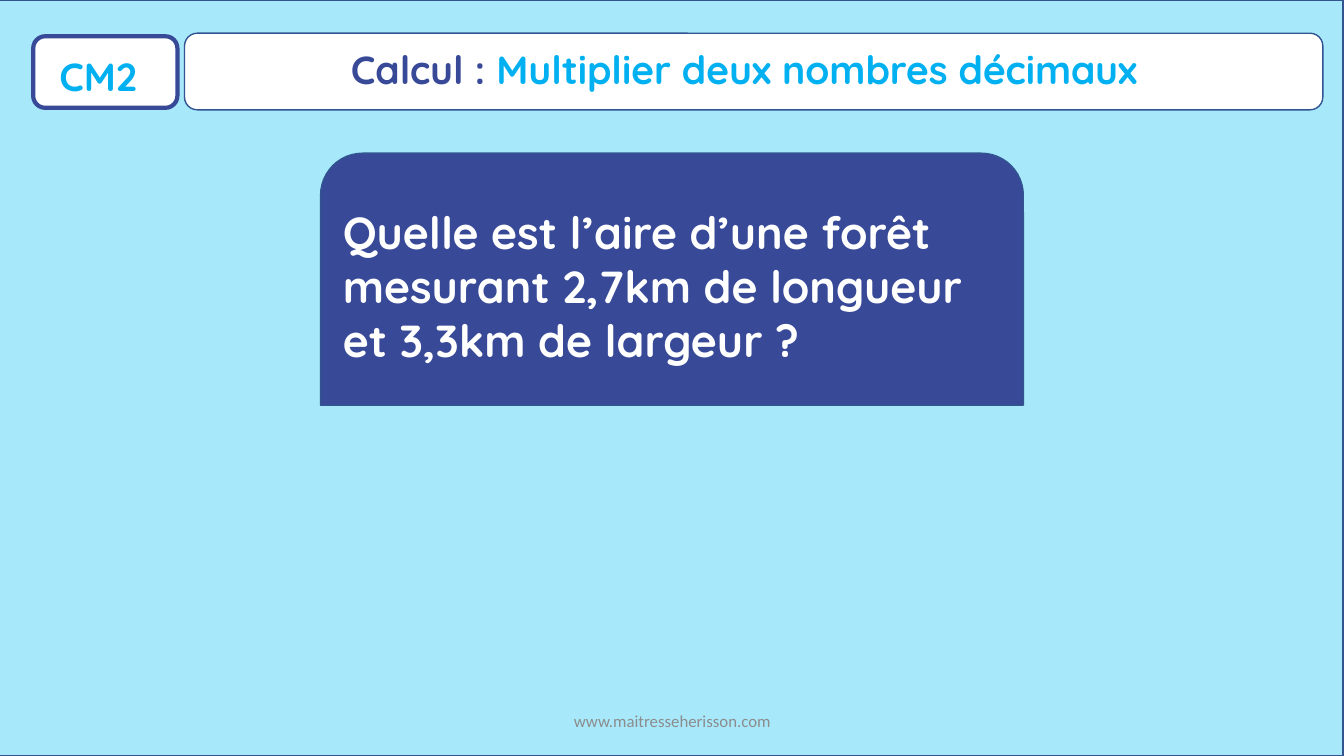
from pptx import Presentation
from pptx.dml.color import RGBColor
from pptx.enum.shapes import MSO_SHAPE
from pptx.enum.text import MSO_ANCHOR, PP_ALIGN
from pptx.util import Inches, Pt

RECTANGLE = MSO_SHAPE.RECTANGLE
ROUNDED = MSO_SHAPE.ROUNDED_RECTANGLE
ROUNDED_TOP = MSO_SHAPE.ROUND_2_SAME_RECTANGLE
LEFT, CENTER = PP_ALIGN.LEFT, PP_ALIGN.CENTER
TOP, MIDDLE = MSO_ANCHOR.TOP, MSO_ANCHOR.MIDDLE

WIDTH, HEIGHT = 13.33, 7.5
SKY, NAVY, CYAN = "A7E8FB", "374997", "00B0F0"
WHITE, GREY, OUTLINE = "FFFFFF", "8C8C8C", "325491"


def color(value):
    return RGBColor.from_string(value)


def add_panel(slide, kind, box, fill, line=OUTLINE, line_width=1):
    shape = slide.shapes.add_shape(kind, *map(Inches, box))
    shape.shadow.inherit = False
    shape.fill.solid()
    shape.fill.fore_color.rgb = color(fill)
    shape.line.color.rgb = color(line)
    shape.line.width = Pt(line_width)
    return shape


def write_text(shape, *runs, size, font="Quicksand", bold=True, align=LEFT, anchor=TOP):
    frame = shape.text_frame
    frame.word_wrap = True
    frame.vertical_anchor = anchor
    paragraph = frame.paragraphs[0]
    paragraph.alignment = align
    for text, text_color in runs:
        run = paragraph.add_run()
        run.text = text
        run.font.name = font
        run.font.size = Pt(size)
        run.font.bold = bold
        run.font.color.rgb = color(text_color)


def add_label(slide, box, *runs, **text_format):
    write_text(slide.shapes.add_textbox(*map(Inches, box)), *runs, **text_format)


def add_level_badge(slide, left, top, width, height):
    add_panel(slide, ROUNDED, (left, top, width, height), WHITE, NAVY, 3)
    add_label(slide, (left + 0.16, top + 0.11, width - 0.33, 0.57), ("CM2", CYAN), size=28)


def add_title_bar(slide, left, top, width, height):
    add_panel(slide, ROUNDED, (left, top, width, height), WHITE)
    add_label(slide, (left + 0.08, top + 0.07, width - 0.35, 0.57),
              ("Calcul : ", NAVY), ("Multiplier deux nombres décimaux", CYAN),
              size=28, align=CENTER)


def add_question(slide, left, top, width, height):
    card = add_panel(slide, ROUNDED_TOP, (left, top, width, height), NAVY)
    question = "Quelle est l’aire d’une forêt mesurant 2,7km de longueur et 3,3km de largeur ?"
    write_text(card, (question, WHITE), size=32, anchor=MIDDLE)


def add_footer(slide, left, top, width, height):
    add_label(slide, (left, top, width, height), ("www.maitresseherisson.com", GREY),
              size=12, font="Calibri", bold=False, align=CENTER, anchor=MIDDLE)


def main():
    presentation = Presentation()
    presentation.slide_width = Inches(WIDTH)
    presentation.slide_height = Inches(HEIGHT)
    slide = presentation.slides.add_slide(presentation.slide_layouts[6])
    add_panel(slide, RECTANGLE, (-0.01, 0, WIDTH, HEIGHT), SKY)
    add_level_badge(slide, 0.33, 0.36, 1.43, 0.71)
    add_footer(slide, 4.42, 6.95, 4.5, 0.4)
    add_title_bar(slide, 1.83, 0.33, 11.29, 0.76)
    add_question(slide, 3.18, 1.52, 6.97, 2.5)
    presentation.save("out.pptx")


if __name__ == "__main__":
    main()
